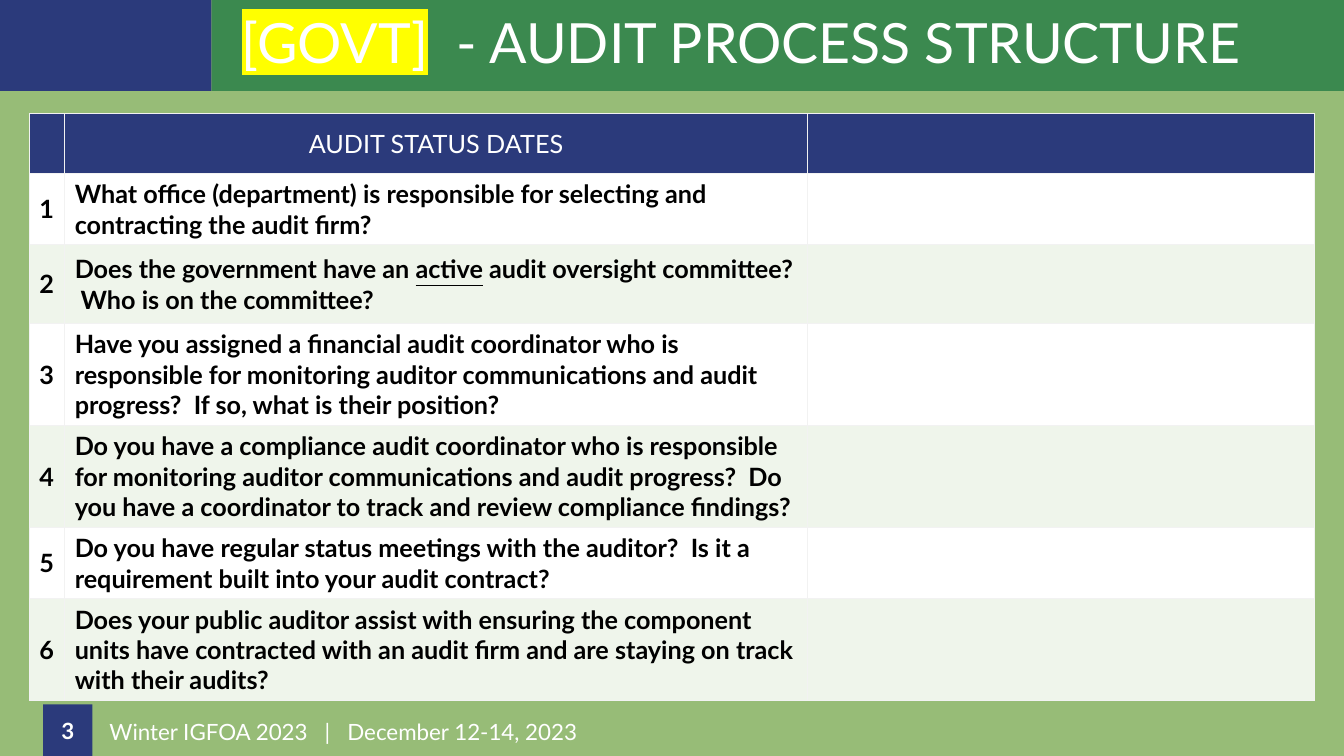
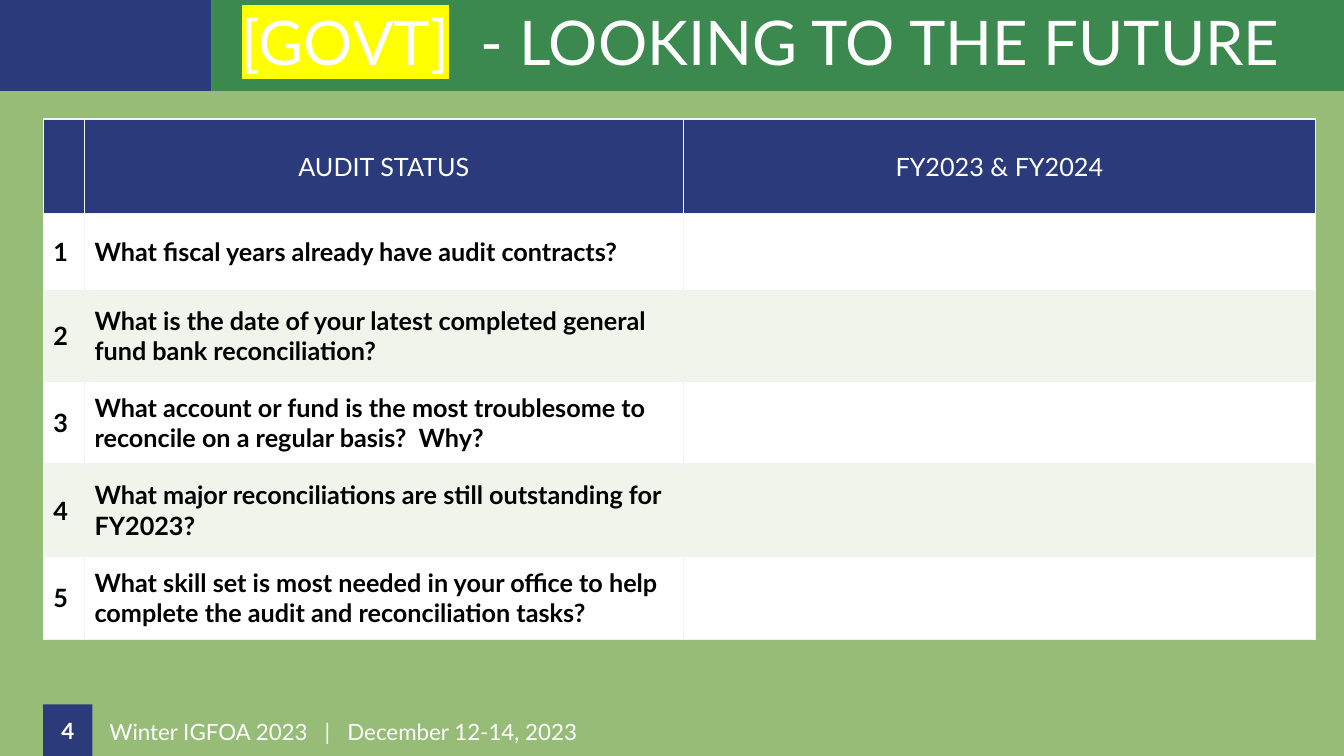
from pptx import Presentation
from pptx import util as u
from pptx.dml.color import RGBColor
from pptx.enum import shapes, text
from pptx.oxml import parse_xml
from pptx.oxml.ns import nsdecls

NAVY, GREEN, LIME, WHITE, BLACK = "2B3A7B", "3B894F", "97BC77", "FFFFFF", "000000"
YELLOW, PALE, RULE = "FFFF00", "EFF5EB", "F2F2F2"
FONT = "Lato"
FOOTER = "Winter IGFOA 2023   |   December 12-14, 2023"


def paint(target, color):
    """Give a fill, or the fill of a font, one solid colour."""
    target.solid()
    target.fore_color.rgb = RGBColor.from_string(color)


def style(p, size, color=WHITE, bold=False, align=text.PP_ALIGN.LEFT):
    p.alignment = align
    p.font.name, p.font.size, p.font.bold = FONT, u.Pt(size), bold
    paint(p.font.fill, color)


# Content: underscores enclose underlined words
pages = [
    dict(number=3, title="AUDIT PROCESS STRUCTURE", size=39.6,
         left=0.74, top=2.87, cols=[0.89, 18.72, 12.78],
         rows=[1.5, 1.8, 1.98, 2.57, 2.57, 1.8, 2.57],
         header=["", "AUDIT STATUS DATES", ""],
         questions=[
             "What office (department) is responsible for selecting and contracting the audit firm?",
             "Does the government have an _active_ audit oversight committee?  "
             "Who is on the committee?",
             "Have you assigned a financial audit coordinator who is responsible for monitoring "
             "auditor communications and audit progress?  If so, what is their position?",
             "Do you have a compliance audit coordinator who is responsible for monitoring "
             "auditor communications and audit progress?  Do you have a coordinator to track "
             "and review compliance findings?",
             "Do you have regular status meetings with the auditor?  "
             "Is it a requirement built into your audit contract?",
             "Does your public auditor assist with ensuring the component units have contracted "
             "with an audit firm and are staying on track with their audits?"]),
    dict(number=4, title="LOOKING TO THE FUTURE", size=44,
         left=1.09, top=3, cols=[1.04, 15.09, 15.93],
         rows=[2.39, 1.93, 2.29, 2.08, 2.34, 2.08],
         header=["", "AUDIT STATUS", "FY2023 & FY2024"],
         questions=[
             "What fiscal years already have audit contracts?",
             "What is the date of your latest completed general fund bank reconciliation?",
             "What account or fund is the most troublesome to reconcile on a regular basis?  Why?",
             "What major reconciliations are still outstanding for FY2023?",
             "What skill set is most needed in your office to help complete the audit "
             "and reconciliation tasks?"]),
]

prs = Presentation()
prs.slide_width, prs.slide_height = u.Cm(33.87), u.Cm(19.05)
paint(prs.slide_master.background.fill, LIME)

for page in pages:
    s = prs.slides.add_slide(prs.slide_layouts[5])

    # Title band
    title = s.shapes.title
    title.left, title.top, title.width, title.height = u.Cm(5.33), u.Cm(0), u.Cm(28.54), u.Cm(2.29)
    paint(title.fill, GREEN)
    tf = title.text_frame
    tf.auto_size = text.MSO_AUTO_SIZE.NONE
    tf.vertical_anchor = text.MSO_ANCHOR.MIDDLE
    tf.margin_left = u.Cm(0.76)
    p = tf.paragraphs[0]
    p.line_spacing = 0.9
    style(p, page["size"])
    r = p.add_run()
    r.text = "[GOVT]"
    r._r.get_or_add_rPr().append(parse_xml(
        f'<a:highlight {nsdecls("a")}><a:srgbClr val="{YELLOW}"/></a:highlight>'))
    p.add_run().text = "  - " + page["title"]

    # Navy corner and page number badge
    for box, label in (((0, 0, 5.33, 2.29), ""),
                       ((1.09, 17.75, 1.24, 1.3), str(page["number"]))):
        sp = s.shapes.add_shape(shapes.MSO_SHAPE.RECTANGLE, *map(u.Cm, box))
        sp.shadow.inherit = False
        paint(sp.fill, NAVY)
        sp.line.fill.background()
        if label:
            tf = sp.text_frame
            tf.text = label
            tf.vertical_anchor = text.MSO_ANCHOR.MIDDLE
            style(tf.paragraphs[0], 16, bold=True, align=text.PP_ALIGN.CENTER)

    # Footer
    tf = s.shapes.add_textbox(u.Cm(2.51), u.Cm(18.19), u.Cm(14.68), u.Cm(0.48)).text_frame
    tf.word_wrap = True
    tf.vertical_anchor = text.MSO_ANCHOR.MIDDLE
    tf.margin_top = tf.margin_bottom = 0
    tf.text = FOOTER
    style(tf.paragraphs[0], 16)

    # Question table
    cols, rows = page["cols"], page["rows"]
    table = s.shapes.add_table(len(rows), len(cols), u.Cm(page["left"]), u.Cm(page["top"]),
                               u.Cm(sum(cols)), u.Cm(sum(rows))).table
    for column, width in zip(table.columns, cols):
        column.width = u.Cm(width)
    for row, height in zip(table.rows, rows):
        row.height = u.Cm(height)

    content = [page["header"]] + [[str(n), q, ""] for n, q in enumerate(page["questions"], 1)]
    for i, values in enumerate(content):
        for j, value in enumerate(values):
            cell = table.cell(i, j)
            cell.vertical_anchor = text.MSO_ANCHOR.MIDDLE
            for side in "LRTB":
                cell._tc.get_or_add_tcPr().append(parse_xml(
                    f'<a:ln{side} {nsdecls("a")} w="12700"><a:solidFill>'
                    f'<a:srgbClr val="{RULE}"/></a:solidFill></a:ln{side}>'))
            paint(cell.fill, NAVY if i == 0 else WHITE if i % 2 else PALE)
            p = cell.text_frame.paragraphs[0]
            if i == 0:
                style(p, 18, align=text.PP_ALIGN.CENTER)
            else:
                style(p, 18, BLACK, bold=True)
            if value:
                for k, part in enumerate(value.split("_")):
                    r = p.add_run()
                    r.text = part
                    if k % 2:
                        r.font.underline = True

prs.save("out.pptx")
